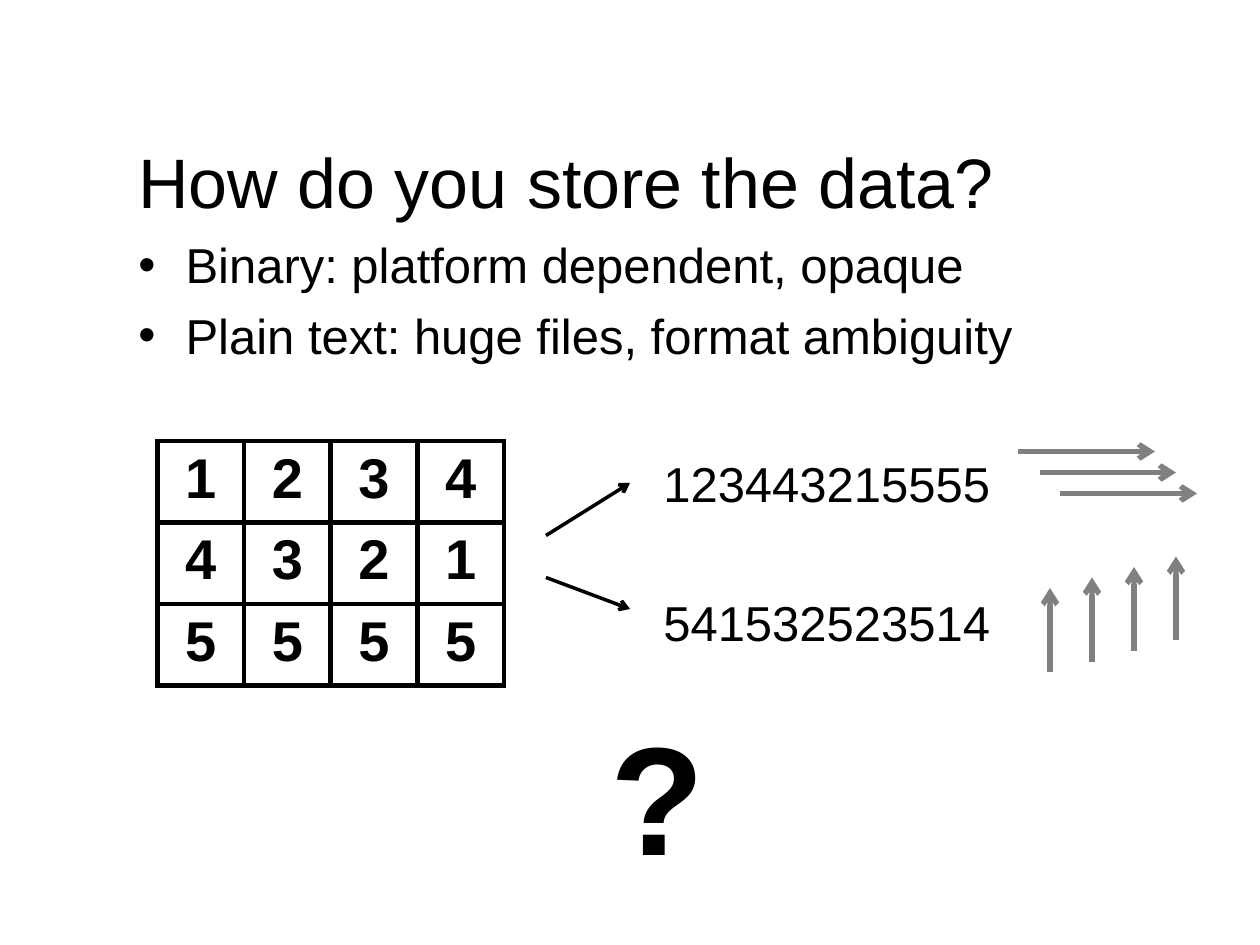
from dataclasses import dataclass

import lxml.etree as etree
import pptx
import pptx.dml.color
import pptx.enum.shapes
import pptx.enum.text
import pptx.oxml.ns
import pptx.util

EMU_PER_PX = 7620
FONT = "Arial"
COLORS = {"ink": "000000", "order": "808080"}
HANGING_INDENT = 45


@dataclass(frozen=True)
class Line:
    text: str
    size: int
    before: float = 0
    bold: bool = False
    bullet: bool = False
    indent: int = HANGING_INDENT


@dataclass(frozen=True)
class Arrow:
    x1: int
    y1: int
    x2: int
    y2: int
    color: str
    weight: int


def px(length: int) -> pptx.util.Emu:
    return pptx.util.Emu(length * EMU_PER_PX)


def rgb(color: str) -> pptx.dml.color.RGBColor:
    return pptx.dml.color.RGBColor.from_string(COLORS[color])


def add_element(parent, tag: str, **attributes: str):
    return etree.SubElement(parent, pptx.oxml.ns.qn(tag), attributes)


def write_line(paragraph, line: Line) -> None:
    properties = paragraph._p.get_or_add_pPr()
    if line.indent:
        properties.set("marL", str(px(line.indent)))
        properties.set("indent", str(px(-line.indent)))
    if line.before:
        paragraph.space_before = pptx.util.Pt(line.before)
    if line.bullet:
        add_element(properties, "a:buFont", typeface=FONT)
        add_element(properties, "a:buChar", char="•")
    else:
        add_element(properties, "a:buNone")
    run = paragraph.add_run()
    run.text = line.text
    run.font.name = FONT
    run.font.size = pptx.util.Pt(line.size)
    run.font.bold = line.bold
    run.font.color.rgb = rgb("ink")


def draw_text(slide, x: int, y: int, width: int, height: int,
              lines: list[Line], top_inset: int = 12):
    frame = slide.shapes.add_textbox(px(x), px(y), px(width), px(height)).text_frame
    frame.word_wrap = True
    frame.margin_top = px(top_inset)
    frame.margin_bottom = 0
    for index, line in enumerate(lines):
        paragraph = frame.add_paragraph() if index else frame.paragraphs[0]
        write_line(paragraph, line)
    return frame


def draw_arrow(slide, arrow: Arrow) -> None:
    connector = slide.shapes.add_connector(
        pptx.enum.shapes.MSO_CONNECTOR.STRAIGHT,
        px(arrow.x1), px(arrow.y1), px(arrow.x2), px(arrow.y2))
    connector.line.color.rgb = rgb(arrow.color)
    connector.line.width = pptx.util.Pt(arrow.weight)
    add_element(connector.line._get_or_add_ln(), "a:tailEnd", type="arrow")
    add_element(connector._element.spPr, "a:effectLst")


def border_cell(cell) -> None:
    cell.fill.background()
    properties = cell._tc.get_or_add_tcPr()
    for index, side in enumerate(("a:lnL", "a:lnR", "a:lnT", "a:lnB")):
        border = add_element(properties, side, w=str(pptx.util.Pt(3)))
        fill = add_element(border, "a:solidFill")
        add_element(fill, "a:srgbClr", val=COLORS["ink"])
        properties.insert(index, border)


def draw_matrix(slide, x: int, y: int, width: int, height: int,
                rows: list[str]) -> None:
    table = slide.shapes.add_table(
        len(rows), len(rows[0]), px(x), px(y), px(width), px(height)).table
    table.first_row = False
    table.horz_banding = False
    for row_index, digits in enumerate(rows):
        for column_index, digit in enumerate(digits):
            cell = table.cell(row_index, column_index)
            border_cell(cell)
            paragraph = cell.text_frame.paragraphs[0]
            paragraph.alignment = pptx.enum.text.PP_ALIGN.CENTER
            write_line(paragraph, Line(digit, 32, bold=True, indent=0))


def main() -> None:
    presentation = pptx.Presentation()
    presentation.slide_width = px(1200)
    presentation.slide_height = px(900)
    slide = presentation.slides.add_slide(presentation.slide_layouts[6])

    draw_text(slide, 120, 120, 960, 270, [
        Line("How do you store the data?", 40),
        Line("Binary: platform dependent, opaque", 28, before=7, bullet=True),
        Line("Plain text: huge files, format ambiguity", 28, before=6.5, bullet=True),
    ])
    draw_matrix(slide, 150, 420, 330, 233, ["1234", "4321", "5555"])
    draw_text(slide, 620, 420, 360, 220, [
        Line("123443215555", 28),
        Line("541532523514", 28, before=45.5),
    ])

    row_order = [Arrow(970 + 20 * i, 430 + 20 * i, 1100 + 20 * i, 430 + 20 * i,
                       "order", 3) for i in range(3)]
    column_order = [Arrow(1000 + 40 * i, 640 - 10 * i, 1000 + 40 * i, 560 - 10 * i,
                          "order", 3) for i in range(4)]
    choices = [Arrow(520, 510, 600, 460, "ink", 2),
               Arrow(520, 550, 600, 580, "ink", 2)]
    for arrow in row_order + column_order + choices:
        draw_arrow(slide, arrow)

    question = draw_text(slide, 570, 650, 120, 190,
                         [Line("?", 88, bold=True, indent=0)], top_inset=18)
    question.auto_size = pptx.enum.text.MSO_AUTO_SIZE.SHAPE_TO_FIT_TEXT

    presentation.save("out.pptx")


if __name__ == "__main__":
    main()
